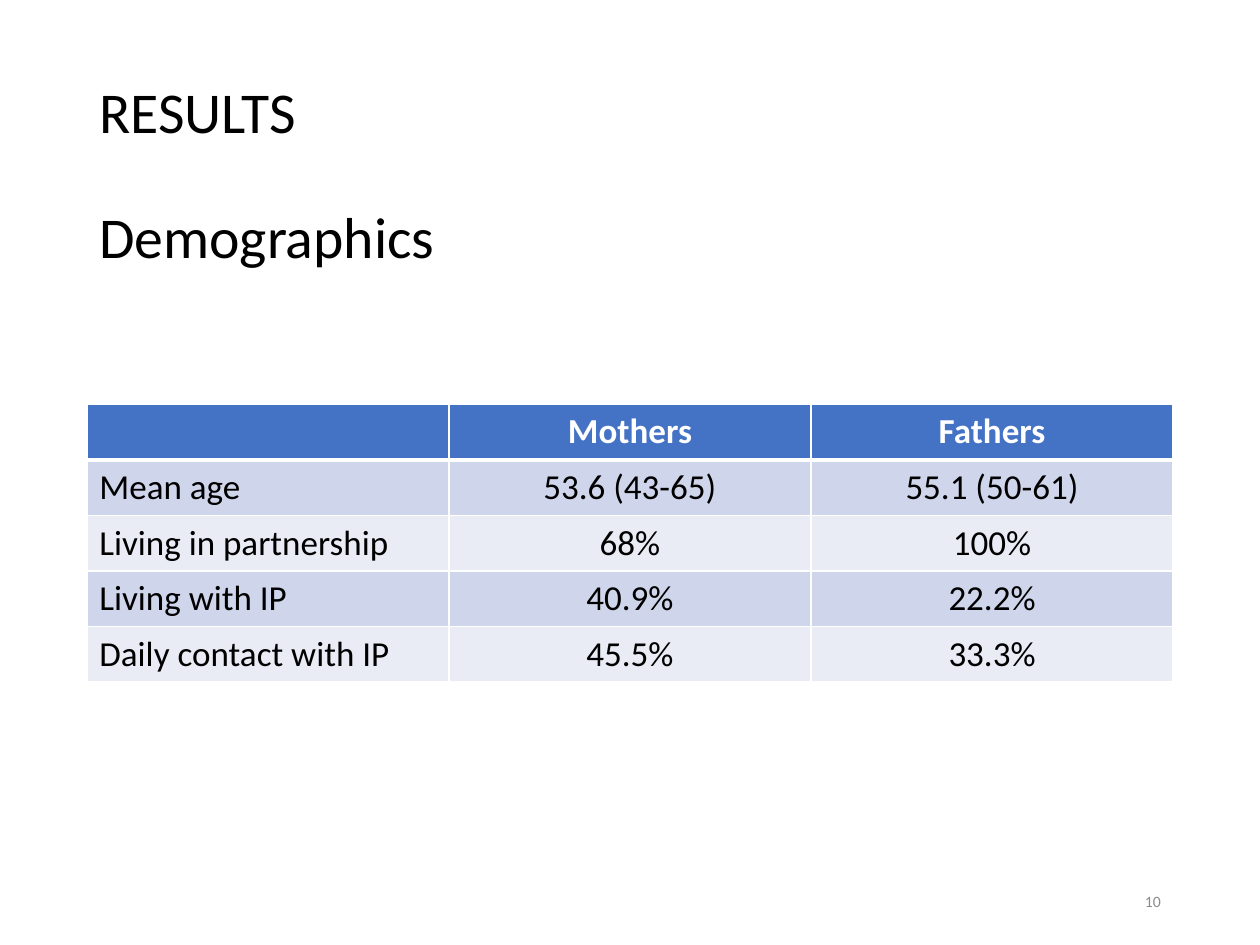
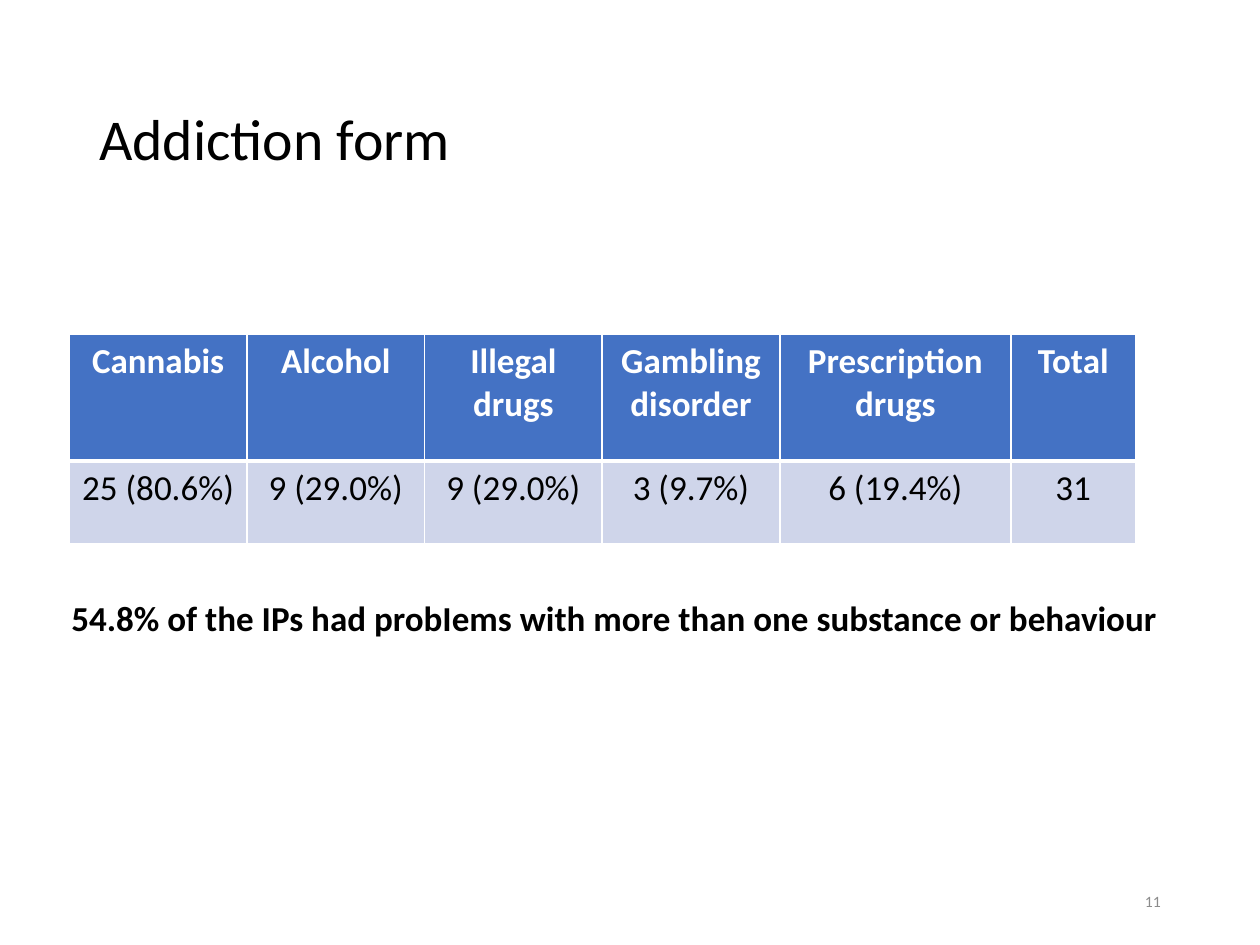
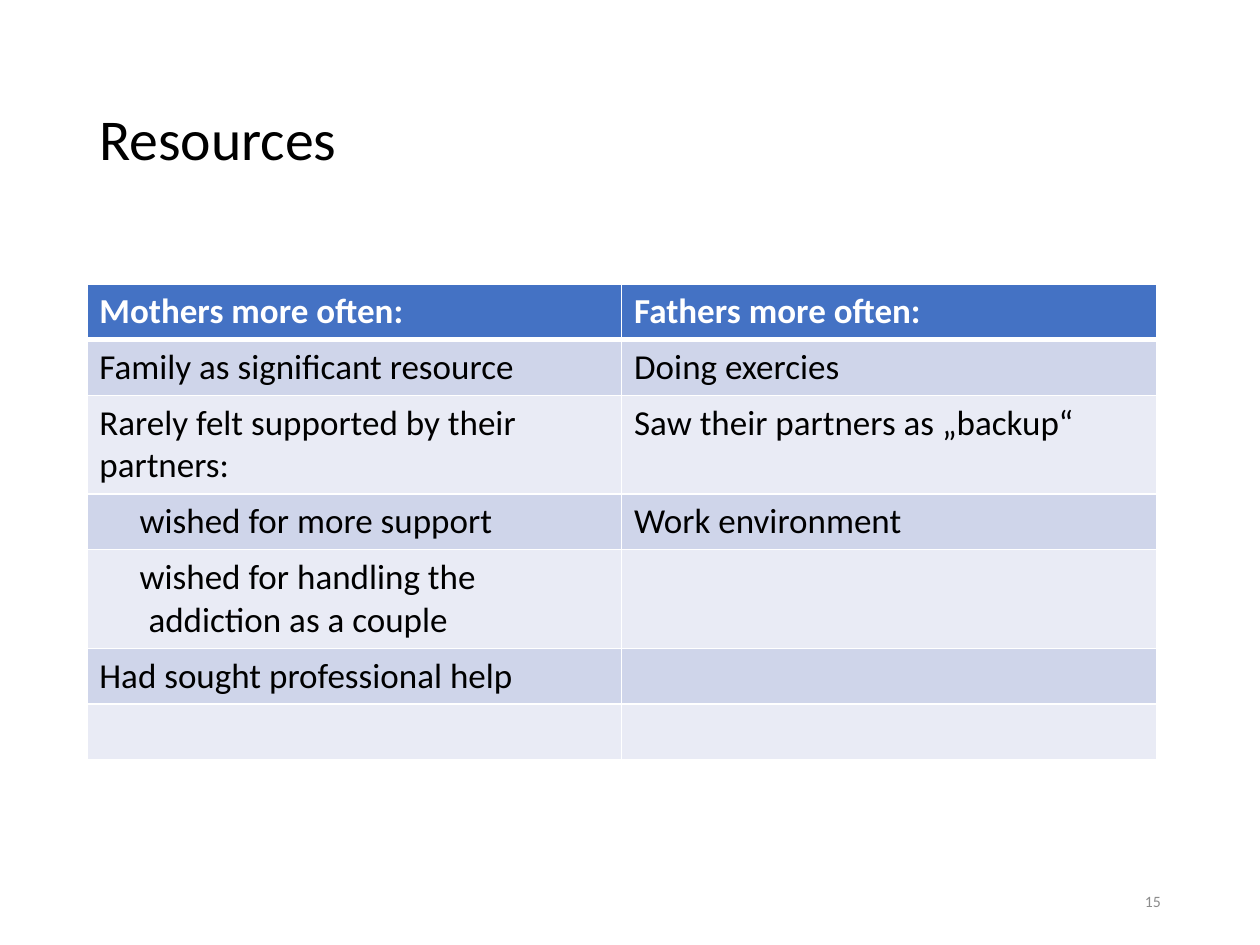
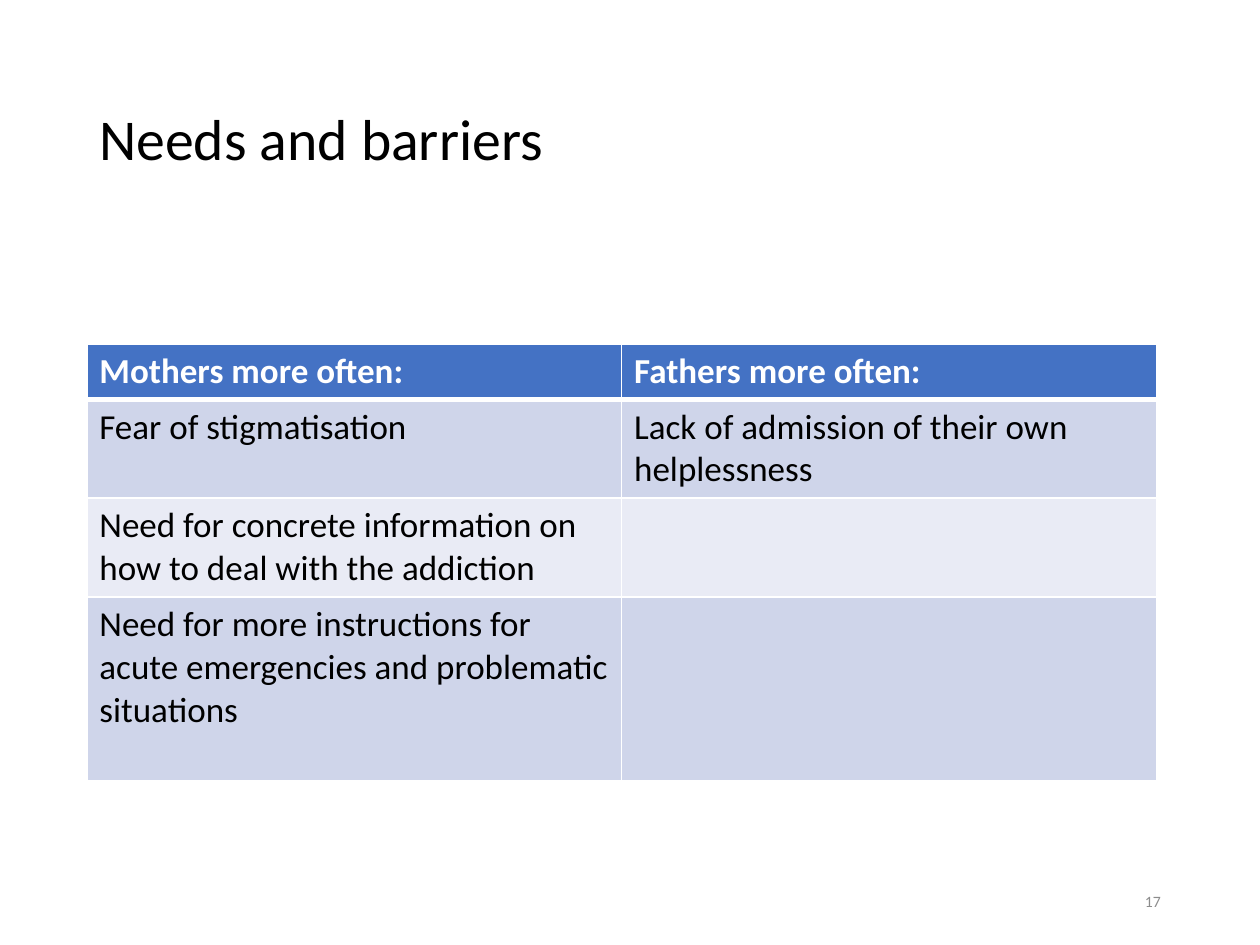
from dataclasses import dataclass

from lxml import etree
from pptx import Presentation
from pptx.dml.color import RGBColor
from pptx.enum.text import MSO_ANCHOR, PP_ALIGN
from pptx.oxml.ns import qn
from pptx.util import Cm, Pt

LEFT, CENTER, RIGHT = PP_ALIGN.LEFT, PP_ALIGN.CENTER, PP_ALIGN.RIGHT
TOP, MIDDLE = MSO_ANCHOR.TOP, MSO_ANCHOR.MIDDLE


@dataclass(frozen=True)
class Theme:
    font: str = "Calibri"
    ink: str = "000000"
    white: str = "FFFFFF"
    muted: str = "8C8C8C"
    header: str = "4472C4"
    bands: tuple = ("CFD5EA", "E9EBF5")
    title_size: int = 33
    body_size: int = 20
    number_size: int = 9
    thin: int = 1
    thick: int = 3
    margin: float = 1.75
    content_width: float = 21.9
    row: float = 1.12      # table row holding one line of text
    extra_line: float = 1.09 - 0.23 + 0.01


THEME = Theme()
TWO_LINES = THEME.row + THEME.extra_line


# Text
def write(frame, text, size=THEME.body_size, color=THEME.ink, bold=False,
          align=LEFT, line_spacing=None, gap=0, indent=None):
    """Write one paragraph per line; indent is (left, first line) in cm."""
    for index, line in enumerate(text.split("\n")):
        para = frame.add_paragraph() if index else frame.paragraphs[0]
        para.alignment = align
        if line_spacing:
            para.line_spacing = line_spacing
        if index and gap:
            para.space_before = Pt(gap)
        if indent:
            left, first = indent
            properties = para._p.get_or_add_pPr()
            properties.set("marL", str(Cm(left)))
            properties.set("indent", str(Cm(first)))
        span = para.add_run()
        span.text = line
        span.font.name = THEME.font
        span.font.size = Pt(size)
        span.font.bold = bold
        span.font.color.rgb = RGBColor.from_string(color)


def add_text(page, text, left, top, width, height, anchor=TOP, **style):
    box = page.shapes.add_textbox(Cm(left), Cm(top), Cm(width), Cm(height))
    box.text_frame.word_wrap = True
    box.text_frame.vertical_anchor = anchor
    write(box.text_frame, text, **style)


# Page with the shared title and page number
def add_page(deck, title, number, title_height=3.68):
    page = deck.slides.add_slide(deck.slide_layouts[6])
    add_text(page, title, THEME.margin, 1.02, THEME.content_width, title_height,
             anchor=MIDDLE, size=THEME.title_size, line_spacing=0.9, gap=36)
    add_text(page, str(number), 17.93, 17.65, 5.72, 1.02, anchor=MIDDLE,
             size=THEME.number_size, color=THEME.muted, align=RIGHT)
    return page


# Tables
def add_borders(cell, **widths):
    properties = cell._tc.get_or_add_tcPr()
    for side in "LRTB":
        if side in widths:
            line = etree.SubElement(properties, qn(f"a:ln{side}"),
                                    w=str(Pt(widths[side])))
            fill = etree.SubElement(line, qn("a:solidFill"))
            etree.SubElement(fill, qn("a:srgbClr"), val=THEME.white)


def style_cell(cell, is_header, color):
    borders = {"L": THEME.thin, "R": THEME.thin, "B": THEME.thin}
    if is_header:
        borders.update(T=THEME.thin, B=THEME.thick)
    add_borders(cell, **borders)
    cell.fill.solid()
    cell.fill.fore_color.rgb = RGBColor.from_string(color)


def add_banded_table(page, rows, left, top, widths, heights, aligns, indents=None):
    """Draw a header row over banded rows; indents maps (row, column)."""
    indents = indents or {}
    table = page.shapes.add_table(len(rows), len(widths), Cm(left), Cm(top),
                                  Cm(sum(widths)), Cm(sum(heights))).table
    for column, width in zip(table.columns, widths):
        column.width = Cm(width)
    for r, (texts, height) in enumerate(zip(rows, heights)):
        is_header = r == 0
        table.rows[r].height = Cm(height)
        color = THEME.header if is_header else THEME.bands[(r - 1) % 2]
        for c, text in enumerate(texts):
            cell = table.cell(r, c)
            style_cell(cell, is_header, color)
            if text:
                write(cell.text_frame, text, bold=is_header, align=aligns[c],
                      color=THEME.white if is_header else THEME.ink,
                      indent=indents.get((r, c)))


def add_parent_comparison(page, rows, top, heights, indents=None):
    rows = [("Mothers more often:", "Fathers more often:")] + rows
    add_banded_table(page, rows, THEME.margin, top, [10.78] * 2, heights,
                     [LEFT] * 2, indents)


# Pages
def add_demographics(deck):
    page = add_page(deck, "RESULTS\nDemographics", 10, title_height=5.11)
    rows = [
        ("", "Mothers", "Fathers"),
        ("Mean age", "53.6 (43-65)", "55.1 (50-61)"),
        ("Living in partnership", "68%", "100%"),
        ("Living with IP", "40.9%", "22.2%"),
        ("Daily contact with IP", "45.5%", "33.3%"),
    ]
    add_banded_table(page, rows, THEME.margin, 8.15, [7.3] * 3,
                     [THEME.row] * len(rows), [LEFT, CENTER, CENTER])


def add_addiction_form(deck):
    page = add_page(deck, "Addiction form", 11)
    add_text(page, "54.8% of the IPs had probIems with more than one substance or behaviour",
             1.19, 11.91, 23.01, 1.11, bold=True)
    rows = [
        ("Cannabis", "Alcohol", "Illegal drugs", "Gambling disorder",
         "Prescription drugs", "Total"),
        ("25 (80.6%)", "9 (29.0%)", "9 (29.0%)", "3 (9.7%)", "6 (19.4%)", "31"),
    ]
    add_banded_table(page, rows, 1.4, 6.73, [3.58] * 4 + [4.66, 2.51],
                     [2.56, 1.68], [CENTER] * 6)


def add_resources(deck):
    page = add_page(deck, "Resources", 15)
    rows = [
        ("Family as significant resource", "Doing exercies"),
        ("Rarely felt supported by their partners:", "Saw their partners as „backup“"),
        ("wished for more support", "Work environment"),
        ("wished for handling the addiction as a couple", ""),
        ("Had sought professional help", ""),
        ("", ""),
    ]
    one = THEME.row
    add_parent_comparison(page, rows, 5.73,
                          [one, one, TWO_LINES, one, TWO_LINES, one, one],
                          {(3, 0): (0.81, 0), (4, 0): (0.99, -0.18)})


def add_needs(deck):
    page = add_page(deck, "Needs and barriers", 17)
    rows = [
        ("Fear of stigmatisation", "Lack of admission of their own helplessness"),
        ("Need for concrete information on how to deal with the addiction", ""),
        ("Need for more instructions for acute emergencies and problematic situations", ""),
    ]
    add_parent_comparison(page, rows, 6.93, [THEME.row, TWO_LINES, TWO_LINES, 3.7])


def main():
    deck = Presentation()
    deck.slide_width, deck.slide_height = Cm(25.4), Cm(19.05)
    add_demographics(deck)
    add_addiction_form(deck)
    add_resources(deck)
    add_needs(deck)
    deck.save("out.pptx")


if __name__ == "__main__":
    main()
